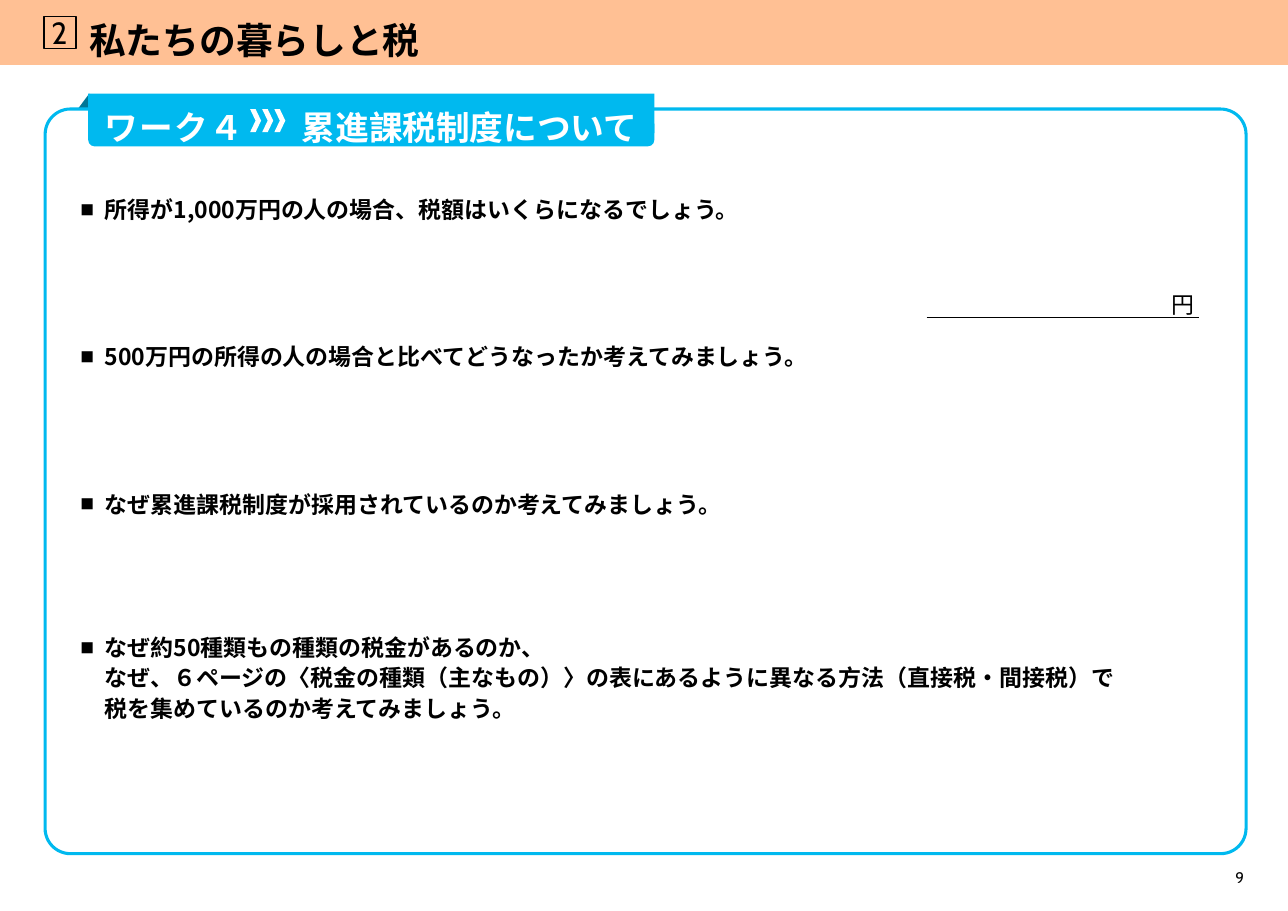
from pptx import Presentation
from pptx.dml.color import RGBColor
from pptx.enum.shapes import MSO_CONNECTOR, MSO_SHAPE as SHAPE
from pptx.enum.text import PP_ALIGN as ALIGN
from pptx.oxml.ns import qn
from pptx.util import Emu, Pt
from lxml import etree

# Content
TITLE, CHAPTER, PAGE = "私たちの暮らしと税", "2", "9"
WORK, TOPIC = "ワーク４", "累進課税制度について"
UNIT = "円"
QUESTIONS = [  # top, lines
    (178, ["所得が1,000万円の人の場合、税額はいくらになるでしょう。"]),
    (311, ["500万円の所得の人の場合と比べてどうなったか考えてみましょう。"]),
    (445, ["なぜ累進課税制度が採用されているのか考えてみましょう。"]),
    (575, ["なぜ約50種類もの種類の税金があるのか、",
           "なぜ、６ページの〈税金の種類（主なもの）〉の表にあるように異なる方法（直接税・間接税）で",
           "税を集めているのか考えてみましょう。"]),
]

# Style
PEACH = RGBColor(0xFF, 0xC0, 0x94)
SKY = RGBColor(0x00, 0xB9, 0xEF)
TEAL = RGBColor(0x00, 0x76, 0x96)
WHITE = RGBColor(0xFF, 0xFF, 0xFF)
BLACK = RGBColor(0x00, 0x00, 0x00)
CABIN, NOTO = "Cabin", "Noto Sans CJK JP"
LEADING = 1.2
PX = 9144  # 100 px to the inch


def px(*lengths):
    return [Emu(n * PX) for n in lengths]


prs = Presentation()
prs.slide_width, prs.slide_height = px(1169, 827)
s = prs.slides.add_slide(prs.slide_layouts[6])


def add_shape(kind, box, fill=None, line=None, width=1, adj=None):
    sp = s.shapes.add_shape(kind, *px(*box))
    sp.shadow.inherit = False
    if fill is None:
        sp.fill.background()
    else:
        sp.fill.solid()
        sp.fill.fore_color.rgb = fill
    if line is None:
        sp.line.fill.background()
    else:
        sp.line.color.rgb = line
        sp.line.width = Pt(width)
    if adj is not None:
        sp.adjustments[0] = adj
    return sp


def add_text(box, lines, size, font=NOTO, color=BLACK, bold=False,
             align=ALIGN.LEFT, spacing=0, bullet=False):
    tf = s.shapes.add_textbox(*px(*box)).text_frame
    tf.margin_left = tf.margin_top = tf.margin_right = tf.margin_bottom = 0
    tf.word_wrap = True
    for i, line in enumerate(lines):
        p = tf.paragraphs[0] if i == 0 else tf.add_paragraph()
        p.alignment = align
        p.line_spacing = Pt(size * LEADING)
        if bullet:
            p.space_after = Pt(2)
            indent_line(p, marked=i == 0)
        r = p.add_run()
        r.text = line
        r.font.name, r.font.size, r.font.bold = font, Pt(size), bold
        r.font.color.rgb = color
        rPr = r._r.get_or_add_rPr()
        etree.SubElement(rPr, qn("a:ea")).set("typeface", NOTO)
        if spacing:
            rPr.set("spc", str(spacing * 100))


def indent_line(p, marked):
    pPr = p._p.get_or_add_pPr()
    indent = 22 * PX
    pPr.set("marL", str(indent))
    pPr.set("indent", str(-indent if marked else 0))
    if marked:
        etree.SubElement(pPr, qn("a:buSzPct")).set("val", "60000")
        etree.SubElement(pPr, qn("a:buFont")).set("typeface", NOTO)
        etree.SubElement(pPr, qn("a:buChar")).set("char", "■")


# Header band
add_shape(SHAPE.RECTANGLE, (0, 0, 1169, 59), PEACH)
add_shape(SHAPE.RECTANGLE, (40, 15, 29, 29), line=BLACK)
add_text((81, 16, 1063, 34), [TITLE], 24, CABIN, bold=True)
add_text((42, 13, 24, 34), [CHAPTER], 20, CABIN, align=ALIGN.CENTER)

# Frame with its folded ribbon
fold = add_shape(SHAPE.ISOSCELES_TRIANGLE, (59, 95, 32, 12), TEAL)
fold.rotation = 270
add_shape(SHAPE.ROUNDED_RECTANGLE, (41, 99, 1090, 676), WHITE, SKY, 2, 0.034)
add_shape(SHAPE.RECTANGLE, (80, 85, 514, 36), SKY)
add_shape(SHAPE.ROUNDED_RECTANGLE, (80, 107, 514, 26), SKY, adj=0.24)

# Ribbon heading
add_text((95, 97, 130, 29), [WORK], 22, color=WHITE, bold=True, spacing=1)
for i in range(3):
    add_shape(SHAPE.CHEVRON, (227 + 11 * i, 99, 10, 21), WHITE)
add_text((274, 97, 315, 29), [TOPIC], 22, color=WHITE, bold=True)

# Questions
for top, lines in QUESTIONS:
    add_text((73, top, 1000, 27 * len(lines)), lines, 15, bold=True, bullet=True)

# Answer line
add_text((1043, 264, 41, 25), [UNIT], 15, align=ALIGN.RIGHT)
rule = s.shapes.add_connector(MSO_CONNECTOR.STRAIGHT, *px(841, 288, 1088, 288))
rule.line.color.rgb = BLACK
rule.line.width = Pt(0.5)
etree.SubElement(rule._element.spPr, qn("a:effectLst"))

# Page number
add_text((1099, 788, 30, 17), [PAGE], 10, CABIN, align=ALIGN.RIGHT)

prs.save("out.pptx")
